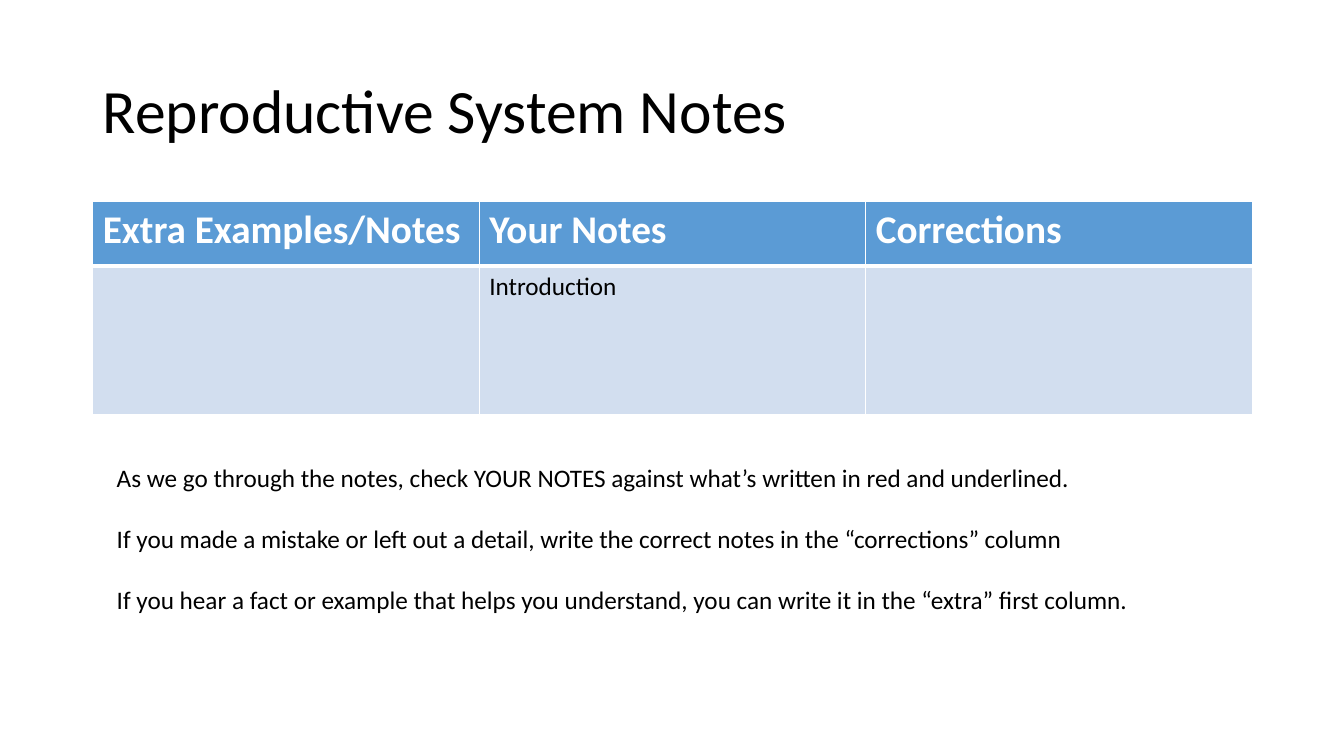
import pptx
import pptx.util
import pptx.dml.color
import pptx.enum.text
import pptx.oxml.ns
from lxml import etree

Inches, Pt = pptx.util.Inches, pptx.util.Pt


def style(p, size, color, bold=False):
    for r in p.runs:
        r.font.name = "Calibri"
        r.font.size = Pt(size)
        r.font.bold = bold
        r.font.color.rgb = pptx.dml.color.RGBColor.from_string(color)


def add_border(cell, side, width):
    """Draw a white line on one side (L, R, T or B) of a cell."""
    qn = pptx.oxml.ns.qn
    ln = etree.Element(qn(f"a:ln{side}"), w=str(Pt(width)))
    fill = etree.SubElement(ln, qn("a:solidFill"))
    etree.SubElement(fill, qn("a:srgbClr"), val="FFFFFF")
    # Border lines must come before the fill of the cell
    tc_pr = cell._tc.get_or_add_tcPr()
    tc_pr.insert(len(tc_pr) - 1, ln)


prs = pptx.Presentation()
prs.slide_width, prs.slide_height = Inches(13.33), Inches(7.5)
s = prs.slides.add_slide(prs.slide_layouts[6])

# Title
title = s.shapes.add_textbox(Inches(0.92), Inches(0.4), Inches(11.5), Inches(1.45))
tf = title.text_frame
tf.word_wrap = True
tf.vertical_anchor = pptx.enum.text.MSO_ANCHOR.MIDDLE
tf.text = "Reproductive System Notes"
tf.paragraphs[0].line_spacing = 0.9
style(tf.paragraphs[0], 44, "000000")

# Notes table
rows = [
    ["Extra Examples/Notes", "Your Notes", "Corrections"],
    ["", "Introduction", ""],
]
row_styles = [
    # height, fill, text size, text colour, bold, bottom border
    (0.64, "5B9BD5", 28, "FFFFFF", True, 3),
    (1.47, "D2DEEF", 18, "000000", False, 1),
]
table = s.shapes.add_table(2, 3, Inches(0.92), Inches(2), Inches(11.5), Inches(2.11)).table
for i, (texts, row_style) in enumerate(zip(rows, row_styles)):
    height, fill, size, color, bold, bottom = row_style
    table.rows[i].height = Inches(height)
    for j, text in enumerate(texts):
        cell = table.cell(i, j)
        cell.text = text
        style(cell.text_frame.paragraphs[0], size, color, bold)
        cell.fill.solid()
        cell.fill.fore_color.rgb = pptx.dml.color.RGBColor.from_string(fill)
        top = row_styles[i - 1][-1] if i else 1
        for side, width in (("L", 1), ("R", 1), ("T", top), ("B", bottom)):
            add_border(cell, side, width)

# Instructions
instructions = [
    "As we go through the notes, check YOUR NOTES against what’s written in red and underlined.",
    "If you made a mistake or left out a detail, write the correct notes in the “corrections” column",
    "If you hear a fact or example that helps you understand, you can write it in the “extra” first column.",
]
box = s.shapes.add_textbox(Inches(1.06), Inches(4.54), Inches(11.24), Inches(1.62))
tf = box.text_frame
tf.word_wrap = True
tf.auto_size = pptx.enum.text.MSO_AUTO_SIZE.SHAPE_TO_FIT_TEXT
for i, text in enumerate(instructions):
    p = tf.add_paragraph() if i else tf.paragraphs[0]
    p.text = text
    if i:
        p.space_before = Pt(22)
    style(p, 18, "000000")

prs.save("out.pptx")
